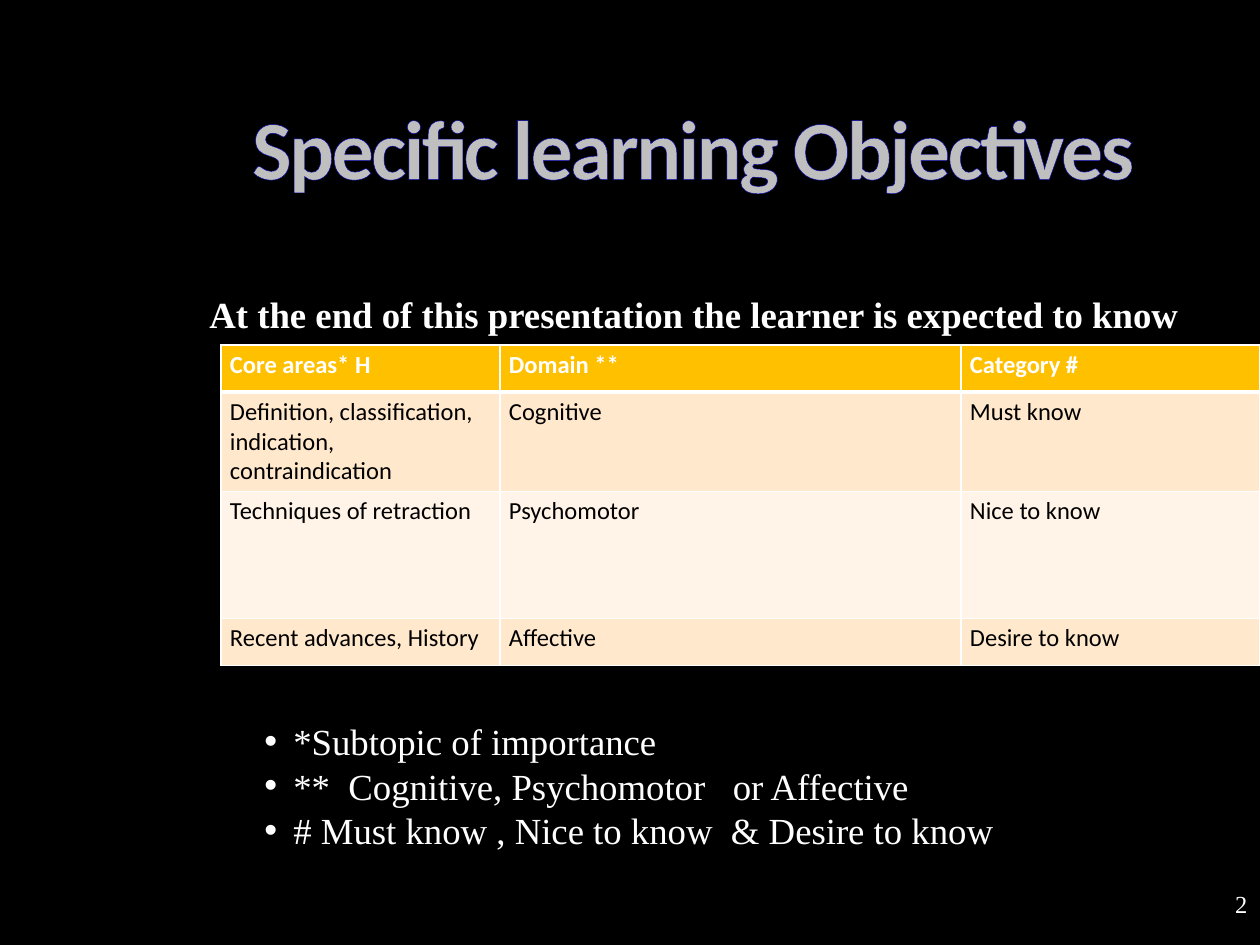
from typing import NamedTuple

from lxml.etree import SubElement
from pptx import Presentation
from pptx.dml.color import RGBColor
from pptx.enum.text import MSO_ANCHOR, MSO_AUTO_SIZE, PP_ALIGN
from pptx.oxml.ns import qn
from pptx.util import Emu, Pt

PX_PER_INCH = 126
BODY_FONT = "Times New Roman"
TABLE_FONT = "Calibri"


class Box(NamedTuple):
    x: int
    y: int
    w: int
    h: int


class Note(NamedTuple):
    box: Box
    lines: list
    font: dict
    frame: dict
    align: PP_ALIGN = PP_ALIGN.LEFT
    bullet: bool = False


class Row(NamedTuple):
    height: int
    fill: str
    color: str
    bold: bool
    top: int
    bottom: int
    texts: tuple


NOTE_FONT = {"name": BODY_FONT, "size": Pt(21), "bold": False}
GROW = {"word_wrap": True, "auto_size": MSO_AUTO_SIZE.SHAPE_TO_FIT_TEXT}
NOTES = [
    Note(Box(252, 713, 857, 146),
         ["*Subtopic of importance",
          "**  Cognitive, Psychomotor   or Affective",
          "# Must know , Nice to know  & Desire to know"],
         NOTE_FONT, GROW, bullet=True),
    Note(Box(197, 286, 1013, 57),
         ["At the end of this presentation the learner is expected to know"],
         {**NOTE_FONT, "bold": True}, GROW),
    Note(Box(998, 872, 262, 63), ["2"], {**NOTE_FONT, "size": Pt(14)},
         {"word_wrap": False, "vertical_anchor": MSO_ANCHOR.MIDDLE},
         align=PP_ALIGN.RIGHT),
]

TABLE_X, TABLE_Y = 221, 345
COLUMNS = (279, 461, 299)
ROWS = [
    Row(47, "FFC000", "FFFFFF", True, 1, 3,
        ("Core areas* H", "Domain **", "Category #")),
    Row(97, "FFE8CC", "000000", False, 3, 1,
        ("Definition, classification, indication, contraindication",
         "Cognitive", "Must know")),
    Row(127, "FFF4E7", "000000", False, 1, 1,
        ("Techniques of retraction", "Psychomotor", "Nice to know")),
    Row(47, "FFE8CC", "000000", False, 1, 1,
        ("Recent advances, History", "Affective", "Desire to know")),
]


def px(n: int) -> Emu:
    """Turn pixels into EMU."""
    return Emu(round(n * 914400 / PX_PER_INCH))


def rgb(value: str) -> RGBColor:
    """Turn a hex string into a colour."""
    return RGBColor.from_string(value)


def apply(obj, values: dict) -> None:
    """Set each named attribute on an object."""
    for name, value in values.items():
        setattr(obj, name, value)


def style(font, values: dict, color: str) -> None:
    """Format a font and colour it."""
    apply(font, values)
    font.color.rgb = rgb(color)


def add_line(parent, tag: str, width: float, color: str):
    """Append a solid line element and return its colour element."""
    ln = SubElement(parent, qn(tag), w=str(Pt(width)))
    fill = SubElement(ln, qn("a:solidFill"))
    return SubElement(fill, qn("a:srgbClr"), val=color)


def add_bullet(p) -> None:
    """Give a paragraph a hanging round bullet."""
    pPr = p._p.get_or_add_pPr()
    pPr.set("marL", str(px(29)))
    pPr.set("indent", str(-px(29)))
    SubElement(pPr, qn("a:buFont"), typeface="Arial")
    SubElement(pPr, qn("a:buChar"), char="•")


def draw_title(s, text: str) -> None:
    """Place the outlined title."""
    sp = s.shapes.title
    apply(sp, dict(zip(("left", "top", "width", "height"),
                       map(px, Box(252, 107, 958, 113)))))
    tf = sp.text_frame
    apply(tf, {"margin_left": 0, "margin_top": 0, "margin_right": 0,
               "margin_bottom": 0, "word_wrap": True,
               "vertical_anchor": MSO_ANCHOR.TOP})
    p = tf.paragraphs[0]
    apply(p, {"alignment": PP_ALIGN.LEFT, "line_spacing": 0.9})
    r = p.add_run()
    r.text = text
    rPr = r.font._element
    rPr.set("spc", "-150")
    clr = add_line(rPr, "a:ln", 0.25, "0808EB")
    SubElement(clr, qn("a:alpha"), val="75000")
    style(r.font, {"name": TABLE_FONT, "size": Pt(48), "bold": True}, "FFFFFF")


def draw_note(s, note: Note) -> None:
    """Add a text box with one paragraph for each line."""
    tf = s.shapes.add_textbox(*map(px, note.box)).text_frame
    apply(tf, note.frame)
    for i, line in enumerate(note.lines):
        p = tf.add_paragraph() if i else tf.paragraphs[0]
        p.alignment = note.align
        if note.bullet:
            add_bullet(p)
        r = p.add_run()
        r.text = line
        style(r.font, note.font, "FFFFFF")


def draw_cell(cell, row: Row, text: str) -> None:
    """Fill, border and letter one table cell."""
    apply(cell, {"margin_left": px(9), "margin_right": px(9),
                 "margin_top": px(5), "margin_bottom": px(5)})
    tcPr = cell._tc.get_or_add_tcPr()
    for side, width in zip("LRTB", (1, 1, row.top, row.bottom)):
        add_line(tcPr, f"a:ln{side}", width, "FFFFFF")
    cell.fill.solid()
    cell.fill.fore_color.rgb = rgb(row.fill)
    r = cell.text_frame.paragraphs[0].add_run()
    r.text = text
    style(r.font, {"name": TABLE_FONT, "size": Pt(14), "bold": row.bold}, row.color)


def draw_table(s) -> None:
    """Add the table of objectives."""
    box = Box(TABLE_X, TABLE_Y, sum(COLUMNS), sum(row.height for row in ROWS))
    table = s.shapes.add_table(len(ROWS), len(COLUMNS), *map(px, box)).table
    for column, width in zip(table.columns, COLUMNS):
        column.width = px(width)
    for i, row in enumerate(ROWS):
        table.rows[i].height = px(row.height)
        for j, text in enumerate(row.texts):
            draw_cell(table.cell(i, j), row, text)


def main() -> None:
    """Build and save the slide."""
    prs = Presentation()
    apply(prs, {"slide_width": px(1260), "slide_height": px(945)})
    s = prs.slides.add_slide(prs.slide_layouts[5])
    s.background.fill.solid()
    s.background.fill.fore_color.rgb = rgb("000000")
    draw_title(s, "Specific learning Objectives")
    draw_table(s)
    for note in NOTES:
        draw_note(s, note)
    prs.save("out.pptx")


if __name__ == "__main__":
    main()
